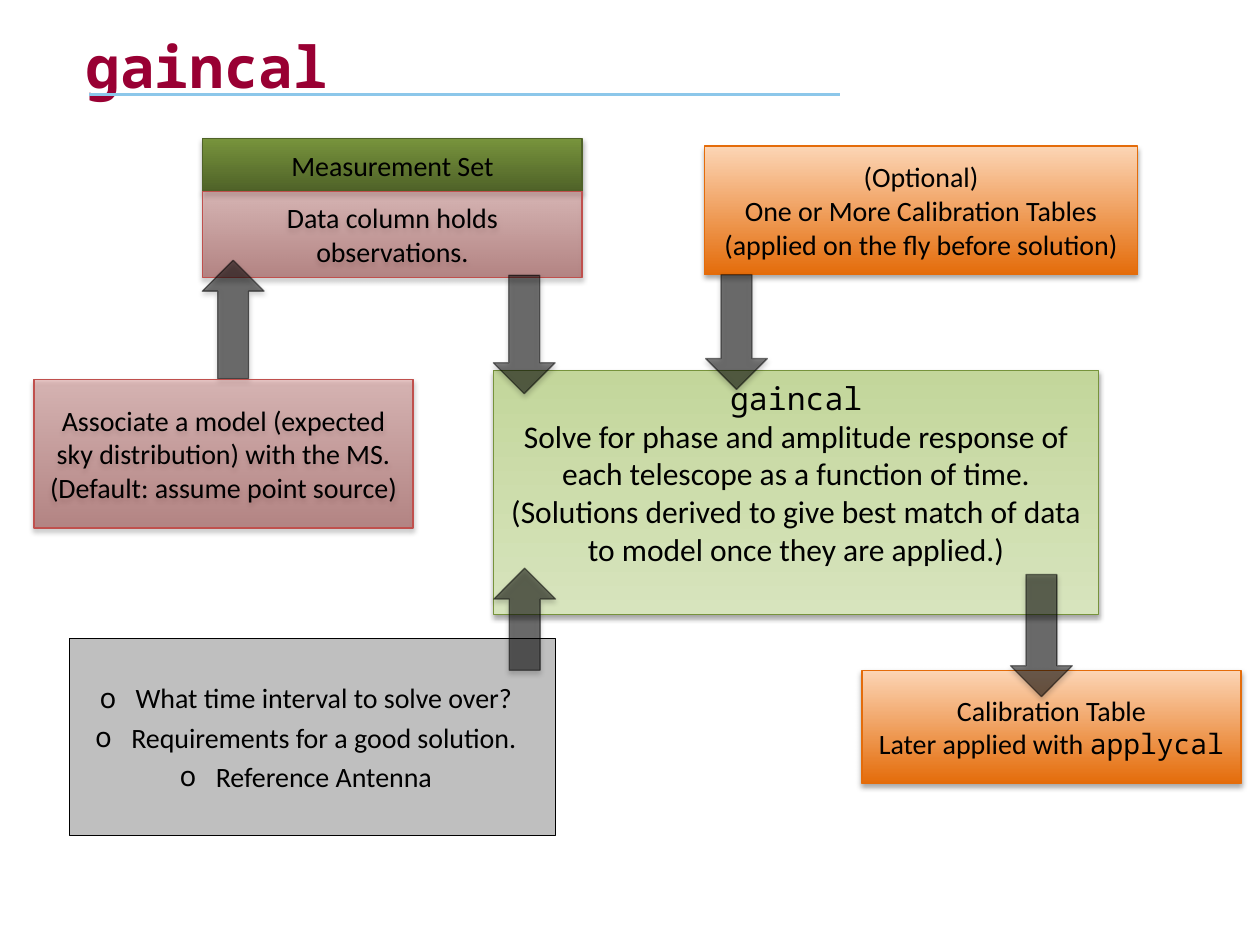
from lxml.etree import SubElement
from pptx import Presentation
from pptx.dml.color import RGBColor
from pptx.enum.shapes import MSO_CONNECTOR, MSO_SHAPE
from pptx.enum.text import MSO_ANCHOR, PP_ALIGN
from pptx.oxml.ns import qn
from pptx.util import Pt

SANS, MONO = "Calibri", "Noto Sans Mono"
BLACK = "000000"
UPWARD, DOWNWARD = 90, 270
ORANGE = ("E46C0A", "FCD5B5")
ROSE = ("953735", "D99694")
OLIVE = ("4F6228", "77933C")
PALE_GREEN = ("C3D69B", "D7E4BD")
BOX_WIDTH = 216.7


def colour(value):
    return RGBColor.from_string(value)


class FlowSlide:
    def __init__(self, presentation):
        self.slide = presentation.slides.add_slide(presentation.slide_layouts[6])

    def fade(self, shape):
        """Make every colour set so far on the shape half transparent."""
        for element in shape._element.spPr.iter(qn("a:srgbClr")):
            SubElement(element, qn("a:alpha"), val="50000")

    def cast_shadow(self, shape):
        effects = shape._element.spPr.find(qn("a:effectLst"))
        shadow = SubElement(effects, qn("a:outerShdw"), blurRad=str(Pt(3.1)),
                            dist=str(Pt(1.8)), dir="5400000", rotWithShape="0")
        shade = SubElement(shadow, qn("a:srgbClr"), val=BLACK)
        SubElement(shade, qn("a:alpha"), val="35000")

    def shape(self, kind, left, top, width, height):
        shape = self.slide.shapes.add_shape(
            kind, Pt(left), Pt(top), Pt(width), Pt(height))
        shape.shadow.inherit = False
        return shape

    def outline(self, shape, value):
        shape.line.color.rgb = colour(value)
        shape.line.width = Pt(0.75)

    def add_run(self, paragraph, text, size, font=SANS, value=BLACK, bold=False):
        run = paragraph.add_run()
        run.text = text
        run.font.size = Pt(size)
        run.font.name = font
        run.font.bold = bold
        run.font.color.rgb = colour(value)

    def add_paragraphs(self, shape, lines, size, bullet=None):
        """Each line is a list of (text, font) runs."""
        frame = shape.text_frame
        frame.word_wrap = True
        frame.vertical_anchor = MSO_ANCHOR.MIDDLE
        for index, runs in enumerate(lines):
            paragraph = frame.add_paragraph() if index else frame.paragraphs[0]
            paragraph.alignment = PP_ALIGN.CENTER
            if bullet:
                if index:
                    paragraph.space_before = Pt(3.2)
                properties = paragraph._p.get_or_add_pPr()
                SubElement(properties, qn("a:buFont"), typeface=MONO)
                SubElement(properties, qn("a:buChar"), char=bullet)
            for text, font in runs:
                self.add_run(paragraph, text, size, font)

    def title(self, text):
        box = self.slide.shapes.add_textbox(Pt(41.8), Pt(0), Pt(571), Pt(74.9))
        frame = box.text_frame
        frame.word_wrap = True
        frame.vertical_anchor = MSO_ANCHOR.MIDDLE
        self.add_run(frame.paragraphs[0], text, 33, MONO, "990033", True)

    def rule(self, left, right, top):
        line = self.slide.shapes.add_connector(
            MSO_CONNECTOR.STRAIGHT, Pt(left), Pt(top), Pt(right), Pt(top))
        line.line.color.rgb = colour("8CC7EA")
        line.line.width = Pt(2.25)
        SubElement(line._element.spPr, qn("a:effectLst"))

    def gradient_box(self, left, top, width, height, colours, edge, lines,
                     size=16, angle=UPWARD, faded=False):
        box = self.shape(MSO_SHAPE.RECTANGLE, left, top, width, height)
        box.fill.gradient()
        box.fill.gradient_angle = angle
        for stop, value in zip(box.fill.gradient_stops, colours):
            stop.color.rgb = colour(value)
        if faded:
            self.fade(box)
        self.outline(box, edge)
        self.cast_shadow(box)
        self.add_paragraphs(box, lines, size)
        return box

    def question_box(self, left, top, width, height, questions):
        box = self.shape(MSO_SHAPE.RECTANGLE, left, top, width, height)
        box.fill.solid()
        box.fill.fore_color.rgb = colour("BFBFBF")
        self.outline(box, BLACK)
        self.add_paragraphs(box, [[(" " + text, SANS)] for text in questions],
                            16, bullet="o")

    def arrow(self, left, top, length, rotation):
        arrow = self.shape(MSO_SHAPE.RIGHT_ARROW, left, top, length, 35.3)
        arrow.rotation = rotation
        arrow.fill.solid()
        arrow.fill.fore_color.rgb = colour(BLACK)
        self.outline(arrow, BLACK)
        self.fade(arrow)
        self.cast_shadow(arrow)


def main():
    presentation = Presentation()
    presentation.slide_width, presentation.slide_height = Pt(720), Pt(540)
    flow = FlowSlide(presentation)

    # Output table
    flow.gradient_box(492.5, 383, BOX_WIDTH, 64.8, ORANGE, "E46C0A", [
        [("Calibration Table", SANS)],
        [("Later applied with ", SANS), ("applycal", MONO)]])

    # Title
    flow.title("gaincal")
    flow.rule(51.1, 480.2, 54)

    # Central task, with its text kept above the output arrow
    task = flow.gradient_box(282.2, 211.7, 345.6, 139.7, PALE_GREEN, "77933C", [
        [("gaincal", MONO)],
        [("Solve for phase and amplitude response of each telescope "
          "as a function of time.", SANS)],
        [("(Solutions derived to give best match of data to model "
          "once they are applied.)", SANS)]], size=18, angle=DOWNWARD)
    task.text_frame.margin_bottom = Pt(25.6)

    # Measurement set
    flow.gradient_box(115.9, 79.2, BOX_WIDTH, 30.2, OLIVE, "4F6228",
                      [[("Measurement Set", SANS)]])
    flow.gradient_box(115.9, 109.4, BOX_WIDTH, 49, ROSE, "C0504D",
                      [[("Data column holds observations.", SANS)]], faded=True)
    flow.arrow(265.7, 173.5, 67.7, 90)
    flow.arrow(560.2, 345.6, 69.8, 90)

    # Optional input tables
    flow.gradient_box(402.5, 83.5, 247.7, 73.4, ORANGE, "E46C0A", [
        [("(Optional)", SANS)],
        [("One or More Calibration Tables", SANS)],
        [("(applied on the fly before solution)", SANS)]])
    flow.arrow(388.1, 172.1, 65.5, 90)

    # Model
    flow.arrow(99.4, 164.9, 67.7, 270)
    flow.gradient_box(19.4, 216.7, BOX_WIDTH, 85, ROSE, "C0504D", [
        [("Associate a model (expected sky distribution) with the MS.", SANS)],
        [("(Default: assume point source)", SANS)]], faded=True)

    # Choices to make
    flow.question_box(39.6, 365, 277.9, 112.3, [
        "What time interval to solve over?",
        "Requirements for a good solution.",
        "Reference Antenna"])
    flow.arrow(270.7, 336.2, 58.3, 270)

    presentation.save("out.pptx")


if __name__ == "__main__":
    main()
